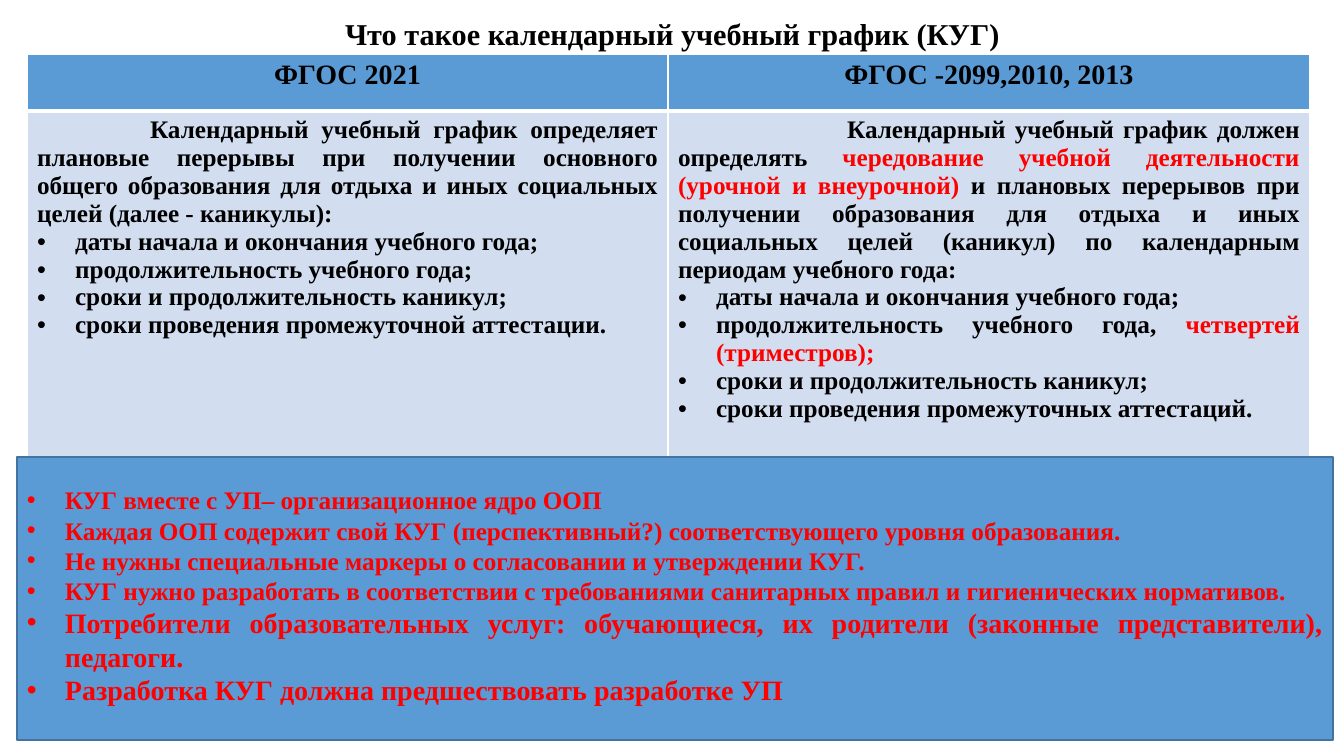
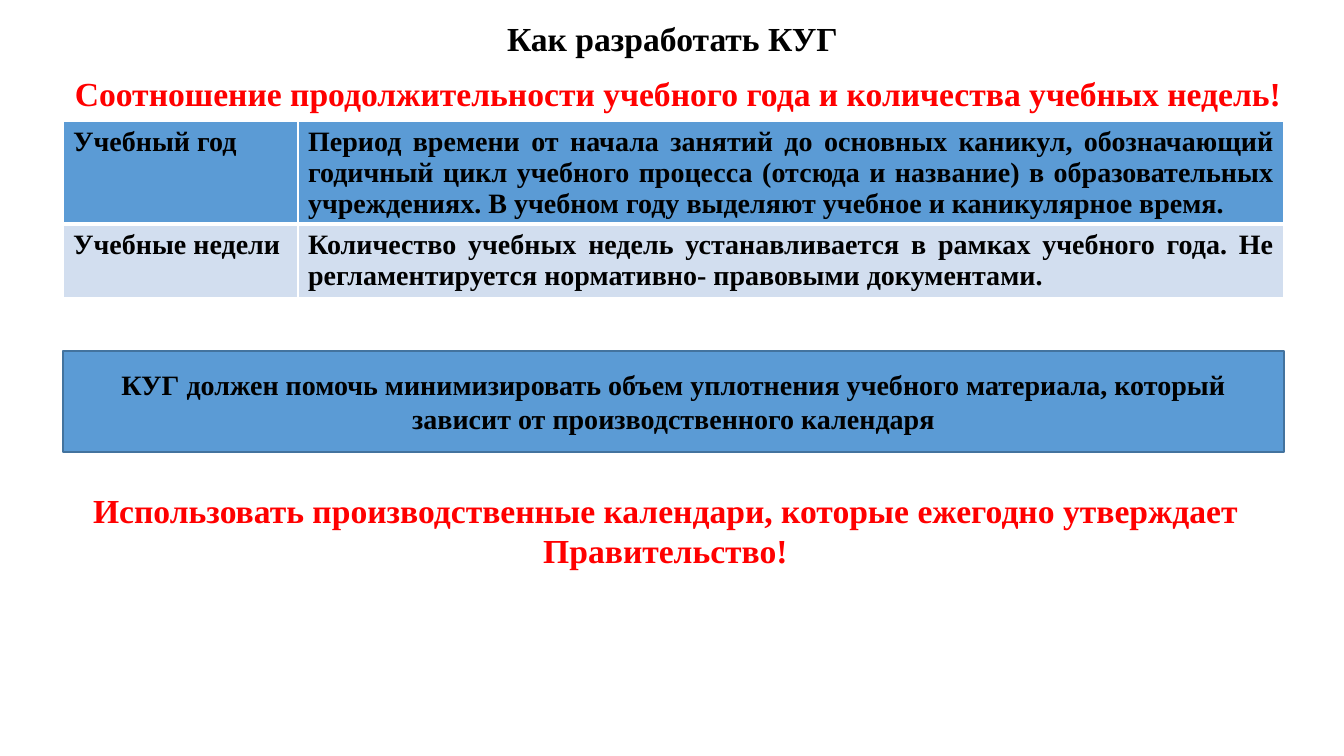
from lxml.etree import SubElement
from pptx import Presentation
from pptx.dml.color import RGBColor
from pptx.enum.shapes import MSO_SHAPE
from pptx.enum.text import MSO_ANCHOR, MSO_AUTO_SIZE, PP_ALIGN
from pptx.oxml import parse_xml
from pptx.oxml.ns import nsdecls, qn
from pptx.util import Pt

SCALE = 914400 / 100.8  # EMU in one px
FONT = "Times New Roman"
COLORS = {
    "black": "000000",
    "red": "FF0000",
    "blue": "5B9BD5",
    "pale": "D2DEEF",
    "edge": "43739E",
    "white": "FFFFFF",
}
BULLET_INDENT = 38
LEFT, CENTER, JUSTIFY = PP_ALIGN.LEFT, PP_ALIGN.CENTER, PP_ALIGN.JUSTIFY


def px(n):
    return round(n * SCALE)


def rgb(name):
    return RGBColor.from_string(COLORS[name])


# Text
def write(p, runs, size, align=JUSTIFY, color="black", bullet=False, first=0):
    """Fill a paragraph; runs is a string or a list of (text, colour)."""
    p.alignment = align
    if isinstance(runs, str):
        runs = [(runs, color)]
    for text, run_color in runs:
        r = p.add_run()
        r.text = text
        r.font.name = FONT
        r.font.size = Pt(size)
        r.font.bold = True
        r.font.color.rgb = rgb(run_color)
    pPr = p._p.get_or_add_pPr()
    pPr.set("marL", str(px(BULLET_INDENT) if bullet else 0))
    pPr.set("indent", str(px(-BULLET_INDENT if bullet else first)))
    if bullet:
        SubElement(pPr, qn("a:buFont")).set("typeface", "Arial")
        SubElement(pPr, qn("a:buChar")).set("char", "•")
    else:
        SubElement(pPr, qn("a:buNone"))


def write_all(tf, paragraphs):
    """Write a list of keyword sets, one for each paragraph."""
    for i, options in enumerate(paragraphs):
        write(tf.paragraphs[0] if i == 0 else tf.add_paragraph(), **options)


def bullets(items, size, color="black"):
    return [dict(runs=item, size=size, color=color, bullet=True) for item in items]


# Shared parts
def place(sp, box):
    sp.left, sp.top, sp.width, sp.height = map(px, box)


def fill_placeholder(sp, box, text, size, color="black", anchor=MSO_ANCHOR.MIDDLE):
    place(sp, box)
    tf = sp.text_frame
    tf.auto_size = MSO_AUTO_SIZE.NONE
    tf.vertical_anchor = anchor
    p = tf.paragraphs[0]
    p.line_spacing = 0.9
    p.space_before = Pt(0 if anchor == MSO_ANCHOR.MIDDLE else 10)
    write(p, text, size, CENTER, color)


def add_panel(s, box, paragraphs):
    sp = s.shapes.add_shape(MSO_SHAPE.RECTANGLE, *map(px, box))
    sp.shadow.inherit = False
    sp.fill.solid()
    sp.fill.fore_color.rgb = rgb("blue")
    sp.line.color.rgb = rgb("edge")
    sp.line.width = Pt(1)
    tf = sp.text_frame
    tf.word_wrap = True
    tf.vertical_anchor = MSO_ANCHOR.MIDDLE
    write_all(tf, paragraphs)
    return sp


def set_borders(cell, widths):
    tcPr = cell._tc.get_or_add_tcPr()
    for i, (side, width) in enumerate(widths.items()):
        tcPr.insert(i, parse_xml(
            f'<a:ln{side} {nsdecls("a")} w="{Pt(width)}"><a:solidFill>'
            f'<a:srgbClr val="{COLORS["white"]}"/></a:solidFill></a:ln{side}>'))


def add_grid(s, left, top, col_widths, row_heights, rows):
    """Table with a blue first row; each cell is a list of paragraphs."""
    table = s.shapes.add_table(
        len(rows), len(col_widths), px(left), px(top),
        px(sum(col_widths)), px(sum(row_heights))).table
    table.first_row = table.horz_banding = False
    for column, width in zip(table.columns, col_widths):
        column.width = px(width)
    for i, (height, cells) in enumerate(zip(row_heights, rows)):
        table.rows[i].height = px(height)
        header = i == 0
        for j, paragraphs in enumerate(cells):
            cell = table.cell(i, j)
            cell.fill.solid()
            cell.fill.fore_color.rgb = rgb("blue" if header else "pale")
            set_borders(cell, {"L": 1, "R": 1, "T": 1 if header else 3,
                               "B": 3 if header else 1})
            write_all(cell.text_frame, paragraphs)


# Slide 1: definition of the schedule in two standards
def build_definition(prs):
    s = prs.slides.add_slide(prs.slide_layouts[5])
    fill_placeholder(s.shapes.title, (93, 17, 1159, 37),
                     "Что такое календарный учебный график (КУГ)", 21.6)

    headers = [[dict(runs=text, size=20, align=CENTER)]
               for text in ("ФГОС 2021", "ФГОС -2099,2010, 2013")]
    new_standard = [dict(
        runs="Календарный учебный график определяет плановые перерывы при получении "
             "основного общего образования для отдыха и иных социальных целей "
             "(далее - каникулы):",
        size=18, first=113)]
    new_standard += bullets([
        "даты начала и окончания учебного года;",
        "продолжительность учебного года;",
        "сроки и продолжительность каникул;",
        "сроки проведения промежуточной аттестации.",
    ], 18)
    old_standard = [dict(
        runs=[("Календарный учебный график должен определять ", "black"),
              ("чередование учебной деятельности (урочной и внеурочной)", "red"),
              (" и плановых перерывов при получении образования для отдыха и иных "
               "социальных целей (каникул) по календарным периодам учебного года:",
               "black")],
        size=18, first=169)]
    old_standard += bullets([
        "даты начала и окончания учебного года;",
        [("продолжительность учебного года, ", "black"),
         ("четвертей (триместров);", "red")],
        "сроки и продолжительность каникул;",
        "сроки проведения промежуточных аттестаций.",
    ], 18)
    add_grid(s, 27, 54, (641, 642), (57, 453),
             [headers, [new_standard, old_standard]])

    # Conclusions
    notes = bullets([
        "КУГ вместе с УП– организационное ядро ООП",
        "Каждая ООП содержит свой КУГ (перспективный?) соответствующего уровня "
        "образования.",
        "Не нужны специальные маркеры о согласовании и утверждении КУГ.",
        "КУГ нужно разработать в соответствии с требованиями санитарных правил и "
        "гигиенических нормативов.",
    ], 18, "red")
    notes += bullets([
        "Потребители образовательных услуг: обучающиеся, их родители (законные "
        "представители), педагоги.",
        "Разработка КУГ должна предшествовать разработке УП",
    ], 20, "red")
    panel = add_panel(s, (17, 457, 1316, 283), notes)
    panel.text_frame.margin_bottom = px(11)


# Slide 2: how to develop the schedule
def build_method(prs):
    s = prs.slides.add_slide(prs.slide_layouts[1])
    fill_placeholder(s.shapes.title, (93, 11, 1159, 60), "Как разработать КУГ", 24)
    fill_placeholder(
        s.placeholders[1], (50, 72, 1256, 648),
        "Соотношение продолжительности учебного года и количества учебных недель!",
        24, "red", MSO_ANCHOR.TOP)

    terms = [
        ("Учебный год",
         "Период времени от начала занятий до основных каникул, обозначающий годичный "
         "цикл учебного процесса (отсюда и название) в образовательных учреждениях. "
         "В учебном году выделяют учебное и каникулярное время."),
        ("Учебные недели",
         "Количество учебных недель устанавливается в рамках учебного года. "
         "Не регламентируется нормативно- правовыми документами."),
    ]
    rows = [[[dict(runs=text, size=20)] for text in term] for term in terms]
    add_grid(s, 63, 121, (235, 986), (103, 73), rows)

    add_panel(s, (63, 351, 1221, 101), [dict(
        runs="КУГ должен помочь минимизировать объем уплотнения учебного материала, "
             "который зависит от производственного календаря",
        size=20, align=CENTER)])

    # Closing advice
    sp = s.shapes.add_textbox(*map(px, (46, 485, 1239, 92)))
    sp.text_frame.word_wrap = True
    write(sp.text_frame.paragraphs[0],
          "Использовать производственные календари, которые ежегодно утверждает "
          "Правительство!", 24, CENTER, "red")


def main():
    prs = Presentation()
    prs.slide_width, prs.slide_height = px(1344), px(756)
    build_definition(prs)
    build_method(prs)
    prs.save("out.pptx")


if __name__ == "__main__":
    main()
